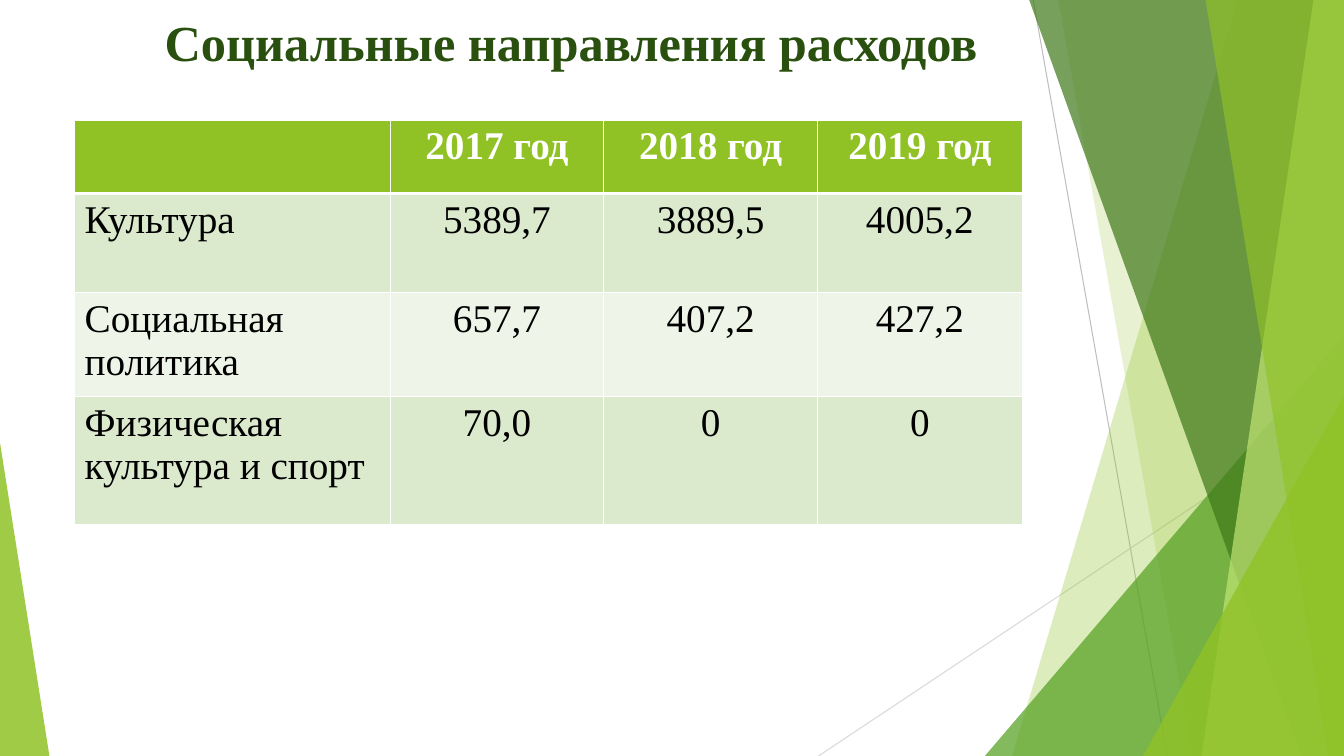
from dataclasses import dataclass

from lxml.etree import SubElement
from pptx import Presentation
from pptx.dml.color import RGBColor as Rgb
from pptx.enum.shapes import MSO_CONNECTOR as Connector, MSO_SHAPE as Preset
from pptx.enum.text import MSO_ANCHOR as Anchor, PP_ALIGN as Align
from pptx.oxml.ns import qn
from pptx.util import Inches, Pt

WIDTH, HEIGHT = Inches(13.333), Inches(7.5)
FONT = "Times New Roman"
COLORS = {
    "lime": "90C226", "green": "54A021", "forest": "3F7819", "pale": "C0E474",
    "title": "2A5010", "odd": "DBE9CD", "even": "EEF4E8", "white": "FFFFFF",
    "black": "000000", "gray": "BFBFBF", "silver": "D9D9D9",
}


@dataclass
class Ray:
    start: tuple[float, float]
    end: tuple[float, float]
    color: str


@dataclass
class Facet:
    top_x: float
    bottom_x: float
    color: str
    opacity: int


@dataclass
class Corner:
    left: float
    top: float
    width: float
    apex: int
    color: str
    opacity: int


RAYS = [
    Ray((76.88, 0), (86.85, 100), "gray"),
    Ray((100, 53.73), (60.9, 100), "silver"),
]
DECOR = [
    Facet(92.1, 75.3, "lime", 30),
    Facet(78.75, 88.73, "lime", 20),
    Corner(73.28, 44.4, 26.72, 1, "green", 72),
    Facet(76.58, 96.83, "forest", 70),
    Facet(97.73, 89.4, "pale", 70),
    Facet(89.7, 98.85, "lime", 65),
    Corner(85.05, 52.4, 14.95, 1, "lime", 80),
    Corner(0, 58.53, 3.68, 0, "lime", 85),
]
TITLE = "Социальные направления расходов"
ROWS = [
    ["", "2017 год", "2018 год", "2019 год"],
    ["Культура", "5389,7", "3889,5", "4005,2"],
    ["Социальная политика", "657,7", "407,2", "427,2"],
    ["Физическая культура и спорт", "70,0", "0", "0"],
]
COLUMN_SHARES = [23.48, 15.9, 15.9, 15.23]
ROW_SHARES = [9.73, 13.07, 13.6, 16.93]


def across(share: float) -> int:
    return round(WIDTH * share / 100)


def down(share: float) -> int:
    return round(HEIGHT * share / 100)


def rgb(name: str) -> Rgb:
    return Rgb.from_string(COLORS[name])


def draw_ray(page, ray: Ray) -> None:
    (x1, y1), (x2, y2) = ray.start, ray.end
    line = page.shapes.add_connector(
        Connector.STRAIGHT, across(x1), down(y1), across(x2), down(y2))
    line.line.color.rgb = rgb(ray.color)
    line.line.width = Pt(0.75)
    SubElement(line._element.spPr, qn("a:effectLst"))


def paint(shape, color: str, opacity: int) -> None:
    shape.shadow.inherit = False
    shape.line.fill.background()
    shape.fill.solid()
    shape.fill.fore_color.rgb = rgb(color)
    tint = shape._element.spPr.find(qn("a:solidFill"))[0]
    SubElement(tint, qn("a:alpha"), val=str(opacity * 1000))


def draw_decor(page, item: Facet | Corner) -> None:
    if isinstance(item, Facet):
        builder = page.shapes.build_freeform(across(item.top_x), 0)
        builder.add_line_segments(
            [(WIDTH, 0), (WIDTH, HEIGHT), (across(item.bottom_x), HEIGHT)])
        shape = builder.convert_to_shape()
    else:
        shape = page.shapes.add_shape(
            Preset.ISOSCELES_TRIANGLE, across(item.left), down(item.top),
            across(item.width), down(100 - item.top))
        shape.adjustments[0] = item.apex
    paint(shape, item.color, item.opacity)


def write(frame, text: str, align: Align, size: int, color: str, bold: bool) -> None:
    para = frame.paragraphs[0]
    para.alignment = align
    span = para.add_run()
    span.text = text
    for name, value in {"name": FONT, "size": Pt(size), "bold": bold}.items():
        setattr(span.font, name, value)
    span.font.color.rgb = rgb(color)


def draw_title(page) -> None:
    box = page.shapes.add_textbox(0, 0, across(85), down(10.93))
    for name, value in {"word_wrap": True, "vertical_anchor": Anchor.MIDDLE}.items():
        setattr(box.text_frame, name, value)
    write(box.text_frame, TITLE, Align.CENTER, 36, "title", True)


def add_borders(cell, widths: dict[str, int]) -> None:
    properties = cell._tc.get_or_add_tcPr()
    for side, width in widths.items():
        edge = SubElement(properties, qn(f"a:ln{side}"), w=str(Pt(width)))
        fill = SubElement(edge, qn("a:solidFill"))
        SubElement(fill, qn("a:srgbClr"), val=COLORS["white"])


def draw_table(page) -> None:
    table = page.shapes.add_table(
        len(ROWS), len(COLUMN_SHARES), across(5.55), down(15.87),
        across(sum(COLUMN_SHARES)), down(sum(ROW_SHARES))).table
    table.first_row = table.horz_banding = False
    for column, share in zip(table.columns, COLUMN_SHARES):
        column.width = across(share)
    for row, share in zip(table.rows, ROW_SHARES):
        row.height = down(share)
    for r, texts in enumerate(ROWS):
        header = r == 0
        background = "lime" if header else "odd" if r % 2 else "even"
        for c, text in enumerate(texts):
            cell = table.cell(r, c)
            add_borders(cell, {"L": 1, "R": 1, "T": 3 if r == 1 else 1,
                               "B": 3 if header else 1})
            cell.fill.solid()
            cell.fill.fore_color.rgb = rgb(background)
            if text:
                write(cell.text_frame, text, Align.CENTER if c else Align.LEFT, 28,
                      "white" if header else "black", header)


def main() -> None:
    deck = Presentation()
    deck.slide_width, deck.slide_height = WIDTH, HEIGHT
    page = deck.slides.add_slide(deck.slide_layouts[6])
    for ray in RAYS:
        draw_ray(page, ray)
    for item in DECOR:
        draw_decor(page, item)
    draw_title(page)
    draw_table(page)
    deck.save("out.pptx")


if __name__ == "__main__":
    main()
